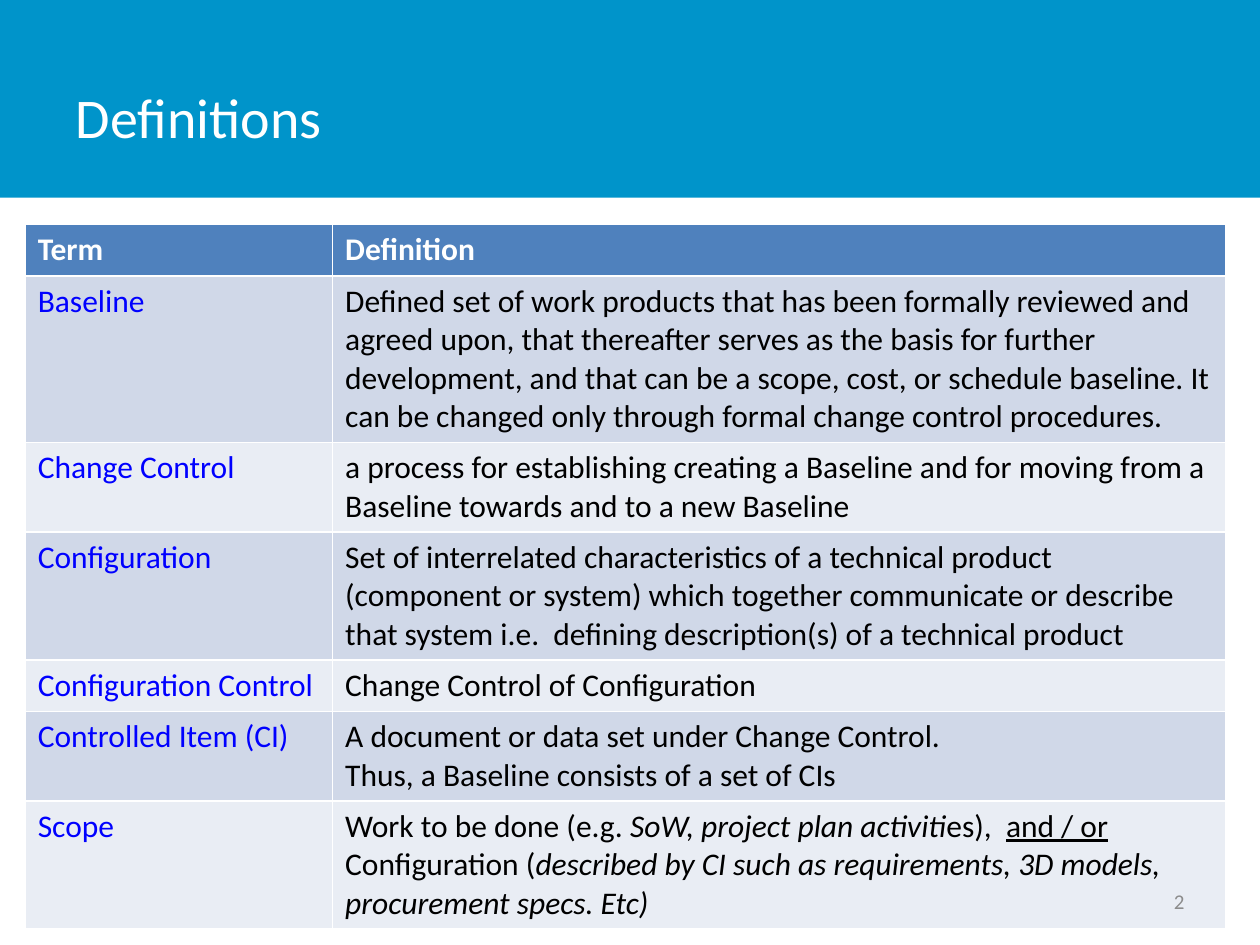
"""Build a slide that defines configuration control terms in a table."""
from dataclasses import dataclass

import pptx
import pptx.dml.color
import pptx.enum.shapes
import pptx.enum.text
import pptx.util
from pptx.util import Inches


@dataclass(frozen=True)
class Theme:
    font: str = "Calibri"
    band: str = "0094CA"
    head: str = "4F81BD"
    odd: str = "D0D8E8"
    even: str = "E9EDF4"
    white: str = "FFFFFF"
    term: str = "0000FF"
    text: str = "000000"
    muted: str = "8C8C8C"
    title: int = 32
    body: int = 18
    small: int = 12


theme = Theme()


def color(code):
    return pptx.dml.color.RGBColor.from_string(code)


def style(para, size, code, bold=False):
    para.font.name = theme.font
    para.font.size = pptx.util.Pt(size)
    para.font.bold = bold
    para.font.color.rgb = color(code)


rows = [
    ("Term", "Definition"),
    ("Baseline",
     "Defined set of work products that has been formally reviewed and agreed upon, "
     "that thereafter serves as the basis for further development, and that can be a "
     "scope, cost, or schedule baseline. It can be changed only through formal change "
     "control procedures."),
    ("Change Control",
     "a process for establishing creating a Baseline and for moving from a Baseline "
     "towards and to a new Baseline"),
    ("Configuration",
     "Set of interrelated characteristics of a technical product (component or system) "
     "which together communicate or describe that system i.e.  defining description(s) "
     "of a technical product"),
    ("Configuration Control", "Change Control of Configuration"),
    ("Controlled Item (CI)",
     "A document or data set under Change Control.\n"
     "Thus, a Baseline consists of a set of CIs"),
    ("Scope", ""),
]
scope = [
    ("Work to be done (e.g. ", ""),
    ("SoW, project plan activiti", "italic"),
    ("es),  ", ""),
    ("and / or ", "underline"),
    ("Configuration (", ""),
    ("described by CI such as requirements, 3D models, procurement specs. Etc)", "italic"),
]

deck = pptx.Presentation()
deck.slide_width, deck.slide_height = Inches(10), Inches(7.5)
slide = deck.slides.add_slide(deck.slide_layouts[5])
shapes = slide.shapes

band = shapes.add_shape(pptx.enum.shapes.MSO_SHAPE.RECTANGLE, 0, 0, Inches(10), Inches(1.57))
band.shadow.inherit = False
band.fill.solid()
band.fill.fore_color.rgb = color(theme.band)
band.line.fill.background()
shapes._spTree.insert(2, band._element)

title = shapes.title
title.left, title.top = Inches(0.5), Inches(0.3)
title.width, title.height = Inches(7.81), Inches(1.25)
title.text_frame.text = "Definitions"
title.text_frame.vertical_anchor = pptx.enum.text.MSO_ANCHOR.MIDDLE
line = title.text_frame.paragraphs[0]
line.alignment = pptx.enum.text.PP_ALIGN.LEFT
style(line, theme.title, theme.white)

frame = shapes.add_table(len(rows), 2, Inches(0.2), Inches(1.78), Inches(9.53), Inches(5.51))
table = frame.table
for col, width in zip(table.columns, (2.44, 7.09)):
    col.width = Inches(width)

for i, texts in enumerate(rows):
    table.rows[i].height = Inches(0.41)
    fill = theme.head if i == 0 else theme.odd if i % 2 else theme.even
    for j, text in enumerate(texts):
        cell = table.cell(i, j)
        cell.fill.solid()
        cell.fill.fore_color.rgb = color(fill)
        cell.text = text
        ink = theme.white if i == 0 else (theme.term, theme.text)[j]
        for para in cell.text_frame.paragraphs:
            style(para, theme.body, ink, bold=i == 0)
frame.height = Inches(5.51)

para = table.cell(len(rows) - 1, 1).text_frame.paragraphs[0]
for text, mark in scope:
    run = para.add_run()
    run.text = text
    if mark:
        setattr(run.font, mark, True)
    style(run, theme.body, theme.text)

page = shapes.add_textbox(Inches(7.17), Inches(6.95), Inches(2.33), Inches(0.4))
page.text_frame.word_wrap = True
page.text_frame.vertical_anchor = pptx.enum.text.MSO_ANCHOR.MIDDLE
page.text_frame.text = "2"
line = page.text_frame.paragraphs[0]
line.alignment = pptx.enum.text.PP_ALIGN.RIGHT
style(line, theme.small, theme.muted)

deck.save("out.pptx")
